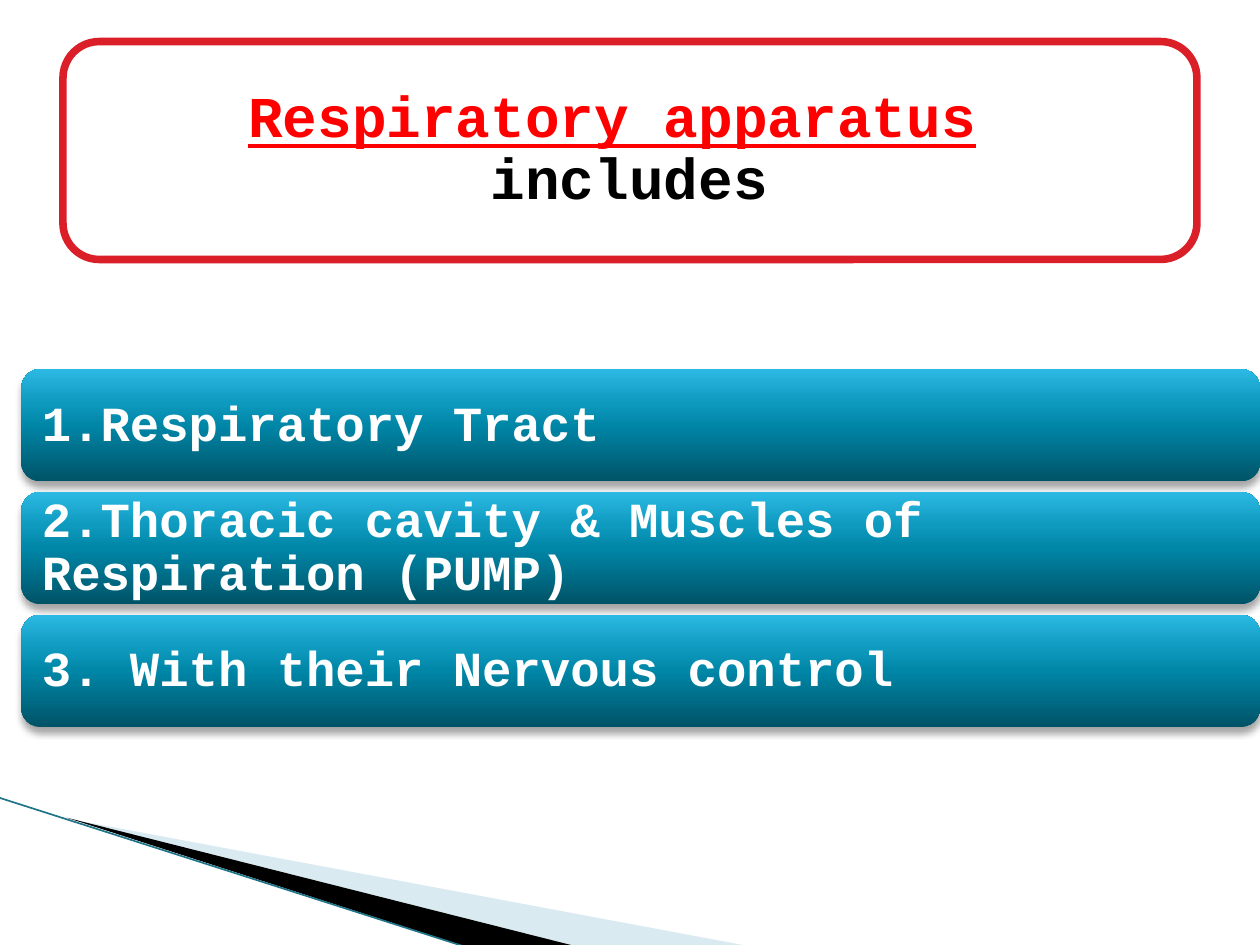
"""Build the slide that lists the parts of the respiratory apparatus."""
from copy import deepcopy

from lxml import etree
from pptx import Presentation
from pptx.dml.color import RGBColor
from pptx.enum.shapes import MSO_CONNECTOR, MSO_SHAPE
from pptx.enum.text import MSO_ANCHOR, MSO_AUTO_SIZE, PP_ALIGN
from pptx.oxml.ns import qn
from pptx.util import Inches, Pt

ROUNDED = MSO_SHAPE.ROUNDED_RECTANGLE
STRAIGHT = MSO_CONNECTOR.STRAIGHT
MIDDLE = MSO_ANCHOR.MIDDLE
NO_FIT = MSO_AUTO_SIZE.NONE
CENTER, LEFT = PP_ALIGN.CENTER, PP_ALIGN.LEFT

THEME = {
    "font": "Courier New",
    "title_size": 33,
    "bar_size": 28,
    "red": "FF0000",
    "frame": "DA1F28",
    "white": "FFFFFF",
    "black": "000000",
    "pale": "A0CBDC",
    "edge": "1F7487",
    "gradient": [(0, "005367"), (50, "0086A7"), (70, "0E9ABE"), (100, "2CB9E3")],
}


def add_color(parent, color, alpha=100):
    node = etree.SubElement(parent, qn("a:srgbClr"), val=color)
    if alpha < 100:
        etree.SubElement(node, qn("a:alpha"), val=str(alpha * 1000))


def add_span(para, text, size, color, underline=False):
    span = para.add_run()
    span.text = text
    formats = {"name": THEME["font"], "size": Pt(size), "bold": True, "underline": underline}
    for name, value in formats.items():
        setattr(span.font, name, value)
    span.font.color.rgb = RGBColor.from_string(color)
    return span


deck = Presentation()
deck.slide_width, deck.slide_height = Inches(10), Inches(7.5)
page = deck.slides.add_slide(deck.slide_layouts[5])

wedges = [
    ([(0.55, 6.5), (5.95, 7.51), (4.56, 7.51)], THEME["pale"], 40),
    ([(0.53, 6.49), (4.57, 7.51), (3.72, 7.52)], THEME["black"], 100),
]
for points, color, alpha in wedges:
    corners = [(Inches(x), Inches(y)) for x, y in points]
    builder = page.shapes.build_freeform(*corners[0])
    builder.add_line_segments(corners[1:], close=True)
    wedge = builder.convert_to_shape()
    wedge.shadow.inherit = False
    wedge.line.fill.background()
    wedge.fill.solid()
    wedge.fill.fore_color.rgb = RGBColor.from_string(color)
    if alpha < 100:
        paint = wedge._element.spPr.find(qn("a:solidFill"))
        paint.clear()
        add_color(paint, color, alpha)

edge = page.shapes.add_connector(STRAIGHT, Inches(-0.01), Inches(6.33), Inches(3.71), Inches(7.52))
edge.line.color.rgb = RGBColor.from_string(THEME["edge"])
edge.line.width = Pt(0.95)
etree.SubElement(edge._element.spPr, qn("a:effectLst"))

frame = page.shapes.add_shape(ROUNDED, Inches(0.5), Inches(0.33), Inches(9), Inches(1.73))
frame.shadow.inherit = False
frame.fill.solid()
frame.fill.fore_color.rgb = RGBColor.from_string(THEME["white"])
frame.line.color.rgb = RGBColor.from_string(THEME["frame"])
frame.line.width = Pt(4.33)

title = page.shapes.title
page.shapes._spTree.append(title._element)
title.left, title.top = Inches(0.58), Inches(0.41)
title.width, title.height = Inches(8.83), Inches(1.56)
para = title.text_frame.paragraphs[0]
add_span(para, "Respiratory apparatus", THEME["title_size"], THEME["red"], True)
space = add_span(para, " ", THEME["title_size"], THEME["red"])
para.add_line_break()
para._p.find(qn("a:br")).append(deepcopy(space._r.rPr))
add_span(para, "includes", THEME["title_size"], THEME["black"])
text_boxes = [(title, CENTER, 0.14)]

items = [
    "1.Respiratory Tract",
    "2.Thoracic cavity & Muscles of Respiration (PUMP)",
    "3. With their Nervous control",
]
for index, item in enumerate(items):
    top = Inches(2.93 + index * 0.975)
    bar = page.shapes.add_shape(ROUNDED, Inches(0.17), top, Inches(9.83), Inches(0.89))
    bar.line.fill.background()
    bar.fill.gradient()
    bar.fill.gradient_angle = 90
    stops = bar._element.spPr.find(".//" + qn("a:gsLst"))
    stops.clear()
    for position, color in THEME["gradient"]:
        add_color(etree.SubElement(stops, qn("a:gs"), pos=str(position * 1000)), color)
    bar.shadow.inherit = False
    effects = bar._element.spPr.find(qn("a:effectLst"))
    shadow = etree.SubElement(
        effects, qn("a:outerShdw"), blurRad=str(Pt(4)), dist=str(Pt(3)), dir="5400000", rotWithShape="0"
    )
    add_color(shadow, THEME["black"], 35)
    add_span(bar.text_frame.paragraphs[0], item, THEME["bar_size"], THEME["white"])
    text_boxes.append((bar, LEFT, 0.12))

for box, alignment, inset in text_boxes:
    settings = {"word_wrap": True, "auto_size": NO_FIT, "vertical_anchor": MIDDLE}
    for side in ("left", "top", "right", "bottom"):
        settings["margin_" + side] = Inches(inset)
    for name, value in settings.items():
        setattr(box.text_frame, name, value)
    box.text_frame.paragraphs[0].alignment = alignment
    box.text_frame.paragraphs[0].line_spacing = 0.9

deck.save("out.pptx")
